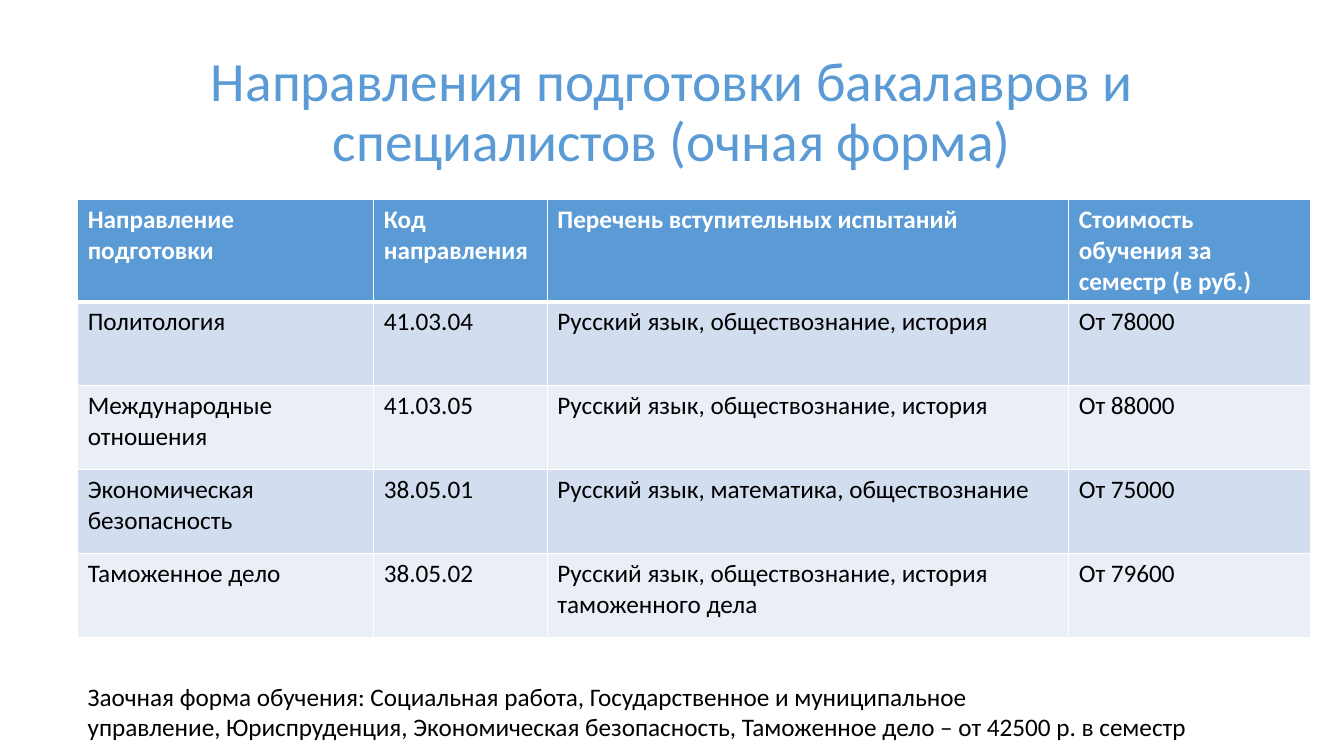
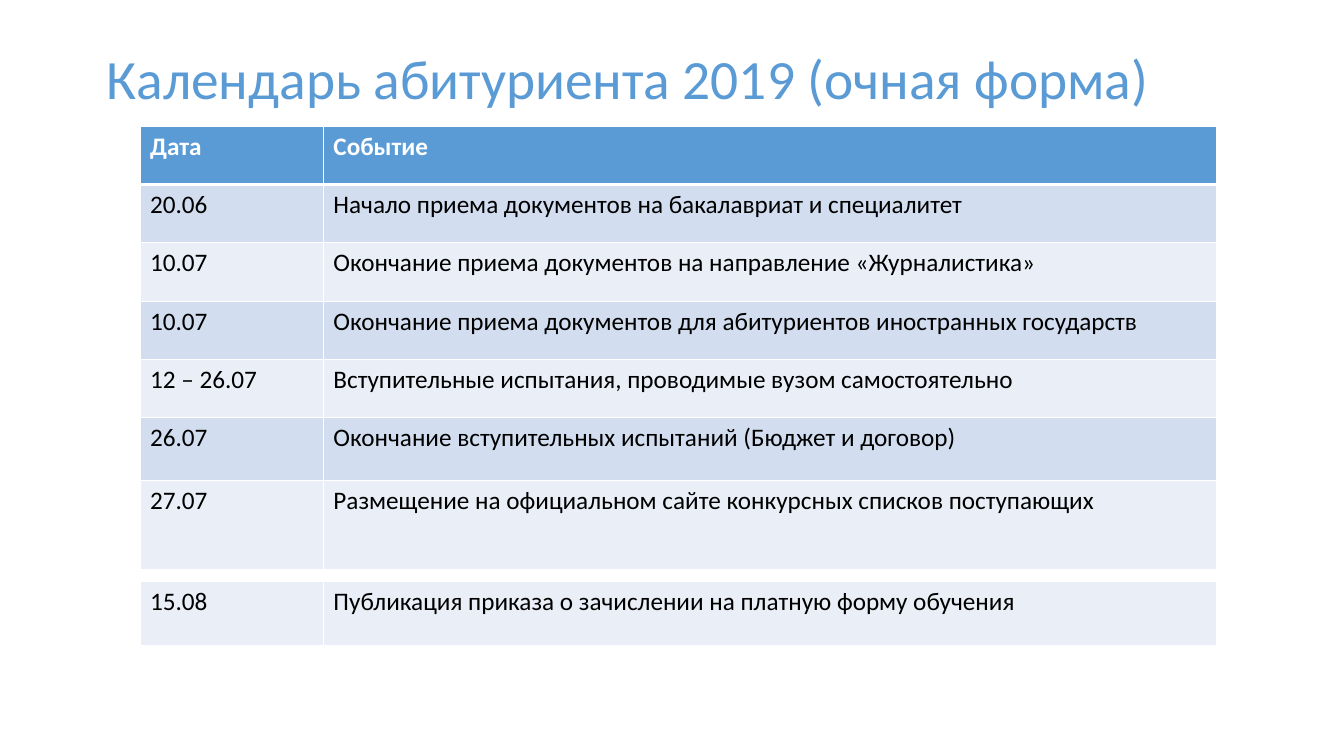
from lxml import etree
from pptx import Presentation
from pptx import util as u
from pptx.dml.color import RGBColor
from pptx.enum import text
from pptx.oxml.ns import qn

Pt = u.Pt

BLUE = RGBColor(0x5B, 0x9B, 0xD5)
BAND_DARK = RGBColor(0xD2, 0xDE, 0xEF)
BAND_LIGHT = RGBColor(0xEA, 0xEF, 0xF7)
WHITE = RGBColor(0xFF, 0xFF, 0xFF)
BLACK = RGBColor(0x00, 0x00, 0x00)

TITLE_FONT = {"name": "Calibri", "size": Pt(39.6), "color": BLUE}
HEADER_FONT = {"name": "Calibri", "size": Pt(18), "bold": True, "color": WHITE}
BODY_FONT = {"name": "Calibri", "size": Pt(18), "bold": False, "color": BLACK}

PROGRAMMES = [
    ("Направление подготовки", "Код направления",
     "Перечень вступительных испытаний", "Стоимость обучения за семестр (в руб.)"),
    ("Политология", "41.03.04", "Русский язык, обществознание, история", "От 78000"),
    ("Международные отношения", "41.03.05",
     "Русский язык, обществознание, история", "От 88000"),
    ("Экономическая безопасность", "38.05.01",
     "Русский язык, математика, обществознание", "От 75000"),
    ("Таможенное дело", "38.05.02",
     "Русский язык, обществознание, история таможенного дела", "От 79600"),
]
PART_TIME = [
    "Заочная форма обучения: Социальная работа, Государственное и муниципальное",
    "управление, Юриспруденция, Экономическая безопасность, "
    "Таможенное дело – от 42500 р. в семестр",
]
CALENDAR = [
    ("Дата", "Событие"),
    ("20.06", "Начало приема документов на бакалавриат и специалитет"),
    ("10.07", "Окончание приема документов на направление «Журналистика»"),
    ("10.07", "Окончание приема документов для абитуриентов иностранных государств"),
    ("12 – 26.07", "Вступительные испытания, проводимые вузом самостоятельно"),
    ("26.07", "Окончание вступительных испытаний (Бюджет и договор)"),
    ("27.07", "Размещение на официальном сайте конкурсных списков поступающих"),
]
ENROLMENT = [("15.08", "Публикация приказа о зачислении на платную форму обучения")]


def write(para, words, style):
    """Add one run of text in the given style."""
    span = para.add_run()
    span.text = words
    for key, value in style.items():
        if key == "color":
            span.font.color.rgb = value
        else:
            setattr(span.font, key, value)


def border_cell(cell, bottom):
    """Draw white cell borders; the bottom one has its own width."""
    props = cell._tc.get_or_add_tcPr()
    for side, width in {"L": 1, "R": 1, "T": 1, "B": bottom}.items():
        line = etree.SubElement(props, qn(f"a:ln{side}"), w=str(Pt(width)))
        fill = etree.SubElement(line, qn("a:solidFill"))
        etree.SubElement(fill, qn("a:srgbClr"), val=str(WHITE))


def add_titled_page(deck, title, left, top, align):
    page = deck.slides.add_slide(deck.slide_layouts[5])
    box = page.shapes.title
    box.left, box.top, box.width, box.height = Pt(left), Pt(top), Pt(816), Pt(64)
    frame = box.text_frame
    settings = {"word_wrap": True, "auto_size": text.MSO_AUTO_SIZE.NONE,
                "vertical_anchor": text.MSO_ANCHOR.MIDDLE}
    for key, value in settings.items():
        setattr(frame, key, value)
    para = frame.paragraphs[0]
    para.alignment, para.line_spacing = align, 0.9
    write(para, title, TITLE_FONT)
    return page


def add_banded_table(page, left, top, widths, heights, rows, header=True):
    """Place a table with an optional header and alternating row fills."""
    table = page.shapes.add_table(len(rows), len(widths), Pt(left), Pt(top),
                                  Pt(sum(widths)), Pt(sum(heights))).table
    table.first_row, table.horz_banding = header, False
    for column, width in zip(table.columns, widths):
        column.width = Pt(width)
    for index, (row, height, words) in enumerate(zip(table.rows, heights, rows)):
        row.height = Pt(height)
        is_header = header and index == 0
        band = BLUE if is_header else BAND_DARK if index % 2 else BAND_LIGHT
        for cell, word in zip(row.cells, words):
            border_cell(cell, 3 if is_header else 1)
            cell.fill.solid()
            cell.fill.fore_color.rgb = band
            write(cell.text_frame.paragraphs[0], word,
                  HEADER_FONT if is_header else BODY_FONT)


def add_note(page, left, top, width, height, lines):
    frame = page.shapes.add_textbox(Pt(left), Pt(top), Pt(width), Pt(height)).text_frame
    frame.word_wrap = False
    frame.auto_size = text.MSO_AUTO_SIZE.SHAPE_TO_FIT_TEXT
    for index, line in enumerate(lines):
        para = frame.add_paragraph() if index else frame.paragraphs[0]
        write(para, line, BODY_FONT)


def programmes_page(deck):
    page = add_titled_page(deck, "Направления подготовки бакалавров и "
                           "специалистов (очная форма)", 72, 49, text.PP_ALIGN.CENTER)
    left = 55.5
    add_banded_table(page, left, 142.5, [211.5, 124, 372.5, 172.5],
                     [72] + [60] * 4, PROGRAMMES)
    add_note(page, left, 483, 818.5, 51, PART_TIME)


def calendar_page(deck):
    page = add_titled_page(deck, "Календарь абитуриента 2019 (очная форма)",
                           69, 26, text.PP_ALIGN.LEFT)
    left, widths = 100, [131, 638]
    add_banded_table(page, left, 90, widths, [41.7] * 5 + [44.5, 64], CALENDAR)
    add_banded_table(page, left, 415.5, widths, [46], ENROLMENT, header=False)


def main():
    deck = Presentation()
    deck.slide_width, deck.slide_height = Pt(960), Pt(540)
    programmes_page(deck)
    calendar_page(deck)
    deck.save("out.pptx")


if __name__ == "__main__":
    main()
